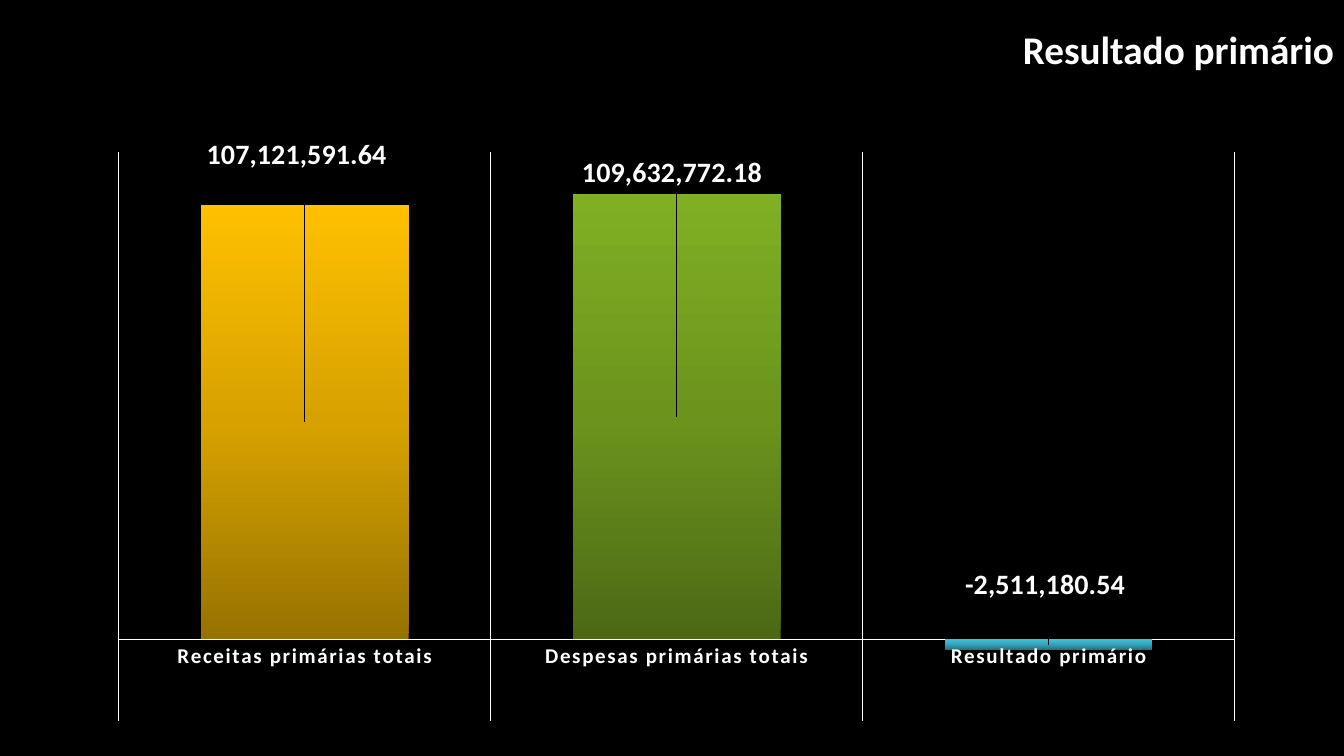
from copy import deepcopy

from lxml import etree
from pptx import Presentation
from pptx.chart.data import CategoryChartData
from pptx.dml.color import RGBColor
from pptx.enum.chart import XL_CHART_TYPE, XL_LABEL_POSITION, XL_TICK_MARK
from pptx.enum.text import MSO_ANCHOR, MSO_AUTO_SIZE, PP_ALIGN
from pptx.oxml.ns import qn
from pptx.util import Cm, Pt

STACKED = XL_CHART_TYPE.COLUMN_STACKED
LABEL_CENTER = XL_LABEL_POSITION.CENTER
NO_TICK = XL_TICK_MARK.NONE
TOP = MSO_ANCHOR.TOP
GROW = MSO_AUTO_SIZE.SHAPE_TO_FIT_TEXT
RIGHT = PP_ALIGN.RIGHT

FONT = "Calibri"
WHITE = "FFFFFF"
NUMBER_FORMAT = "#,##0.00"
TITLE_BOX = (Cm(12.47), Cm(0.51), Cm(21.4), Cm(1.45))
CHART_BOX = (Cm(2.41), Cm(3.45), Cm(29.29), Cm(15.01))
PLOT_AREA = {"x": 0.02, "y": 0.025, "w": 0.96, "h": 0.955}

# Category, value, gradient from bottom to top, label shift as a share of the chart
COLUMNS = [
    ("Receitas primárias totais", 107121591.64,
     ("977200", "D7A200", "FFC000"), {"x": -0.007, "y": -0.45}),
    ("Despesas primárias totais", 109632772.18,
     ("4C6815", "6C941D", "80AF23"), {"x": -0.004, "y": -0.41}),
    ("Resultado primário", -2511180.54,
     ("257382", "35A3B9", "3FC2DB"), {"x": -0.003, "y": -0.1}),
]


def color(hex_value):
    return RGBColor.from_string(hex_value)


def style_font(font, size, bold=True):
    font.name = FONT
    font.size = Pt(size)
    font.bold = bold
    font.color.rgb = color(WHITE)


def style_line(line):
    line.width = Pt(0.75)
    line.color.rgb = color(WHITE)


def make_layout(settings):
    """Return a manual chart layout with the given settings, in schema order."""
    layout = etree.Element(qn("c:layout"))
    manual = etree.SubElement(layout, qn("c:manualLayout"))
    for name, value in settings.items():
        etree.SubElement(manual, qn(f"c:{name}")).set("val", str(value))
    return layout


def place_plot(chart):
    plot_area = chart._chartSpace.chart.plotArea
    for old_layout in plot_area.findall(qn("c:layout")):
        plot_area.remove(old_layout)
    modes = {"layoutTarget": "inner", "xMode": "edge", "yMode": "edge"}
    plot_area.insert(0, make_layout(modes | PLOT_AREA))


def fill_gradient(point, series, shades):
    """Fill a column evenly from its bottom shade to its top shade."""
    fill = point.format.fill
    fill.gradient()
    fill.gradient_angle = 90
    stop_list = series._element.findall(".//" + qn("a:gsLst"))[-1]
    stop_list.append(deepcopy(stop_list[-1]))
    for index, (stop, shade) in enumerate(zip(fill.gradient_stops, shades)):
        stop.color.rgb = color(shade)
        stop.position = index / (len(shades) - 1)


def place_label(point, series, shift):
    label = point.data_label
    style_font(label.font, 20)
    label.position = LABEL_CENTER
    label_element = series._element.findall(".//" + qn("c:dLbl"))[-1]
    label_element.insert(1, make_layout(shift))


def style_axes(chart):
    categories = chart.category_axis
    categories.major_tick_mark = NO_TICK
    categories.has_major_gridlines = True
    style_line(categories.major_gridlines.format.line)
    style_line(categories.format.line)
    style_font(categories.tick_labels.font, 15)
    categories._element.find(".//" + qn("a:defRPr")).set("spc", "120")

    values = chart.value_axis
    values.has_major_gridlines = False
    values.minimum_scale = -20000000
    values.maximum_scale = 120000000
    values.major_unit = 20000000
    values.tick_labels.number_format = NUMBER_FORMAT
    values.tick_labels.number_format_is_linked = False
    values.visible = False


def add_title(page, box):
    title = page.shapes.title
    title.left, title.top, title.width, title.height = box
    frame = title.text_frame
    frame.text = "Resultado primário"
    frame.vertical_anchor = TOP
    frame.word_wrap = True
    frame.auto_size = GROW
    para = frame.paragraphs[0]
    para.alignment = RIGHT
    style_font(para.runs[0].font, 28)


def add_result_chart(page, box):
    data = CategoryChartData(number_format=NUMBER_FORMAT)
    data.categories = [column[0] for column in COLUMNS]
    data.add_series("Series 1", [column[1] for column in COLUMNS])
    chart = page.shapes.add_chart(STACKED, *box, data).chart
    chart.has_legend = False
    chart.has_title = False
    style_font(chart.font, 10, bold=False)
    place_plot(chart)
    style_axes(chart)

    plot = chart.plots[0]
    plot.gap_width = 79
    plot.overlap = 100
    plot.vary_by_categories = False
    series = plot.series[0]
    series.invert_if_negative = False
    series.format.fill.solid()
    series.format.fill.fore_color.rgb = color("FCB11C")
    for index, (_, _, shades, shift) in enumerate(COLUMNS):
        point = series.points[index]
        fill_gradient(point, series, shades)
        place_label(point, series, shift)


def main():
    deck = Presentation()
    deck.slide_width, deck.slide_height = Cm(33.87), Cm(19.05)
    page = deck.slides.add_slide(deck.slide_layouts[5])
    page.background.fill.solid()
    page.background.fill.fore_color.rgb = color("000000")
    add_title(page, TITLE_BOX)
    add_result_chart(page, CHART_BOX)
    deck.save("out.pptx")


if __name__ == "__main__":
    main()
